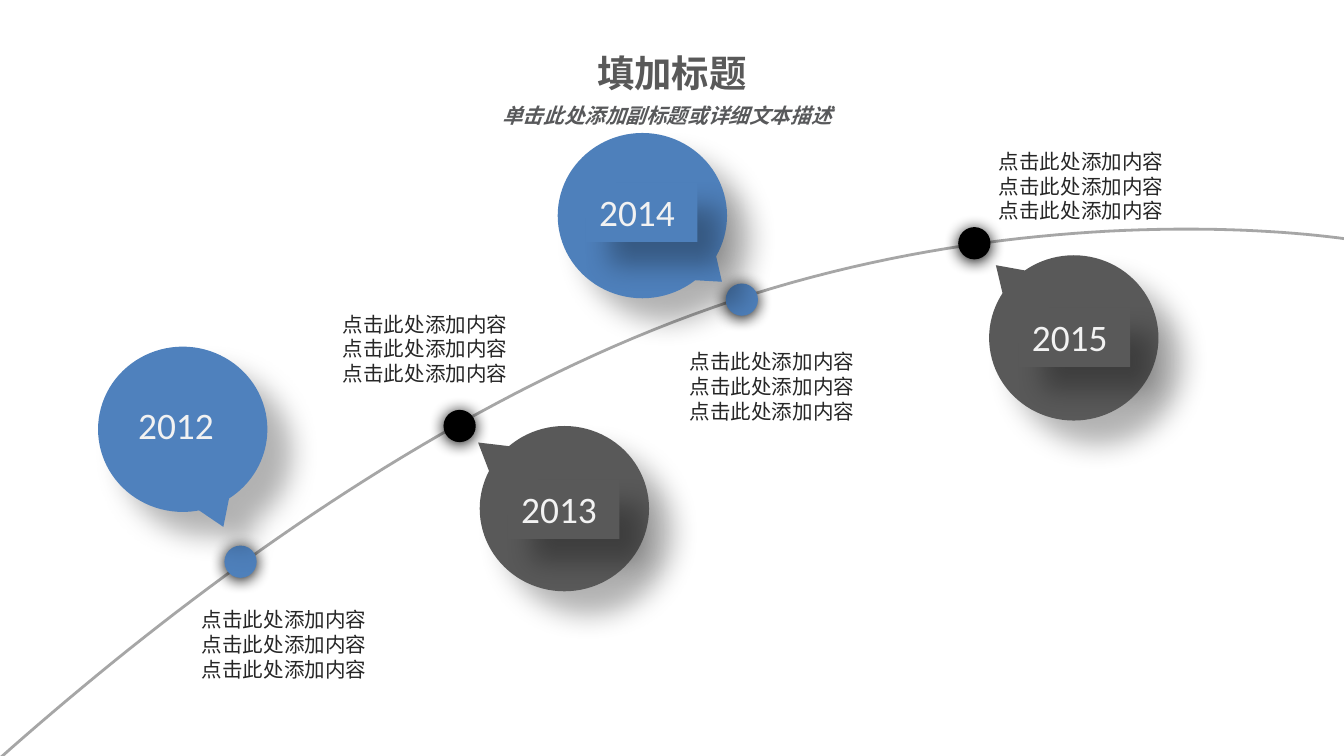
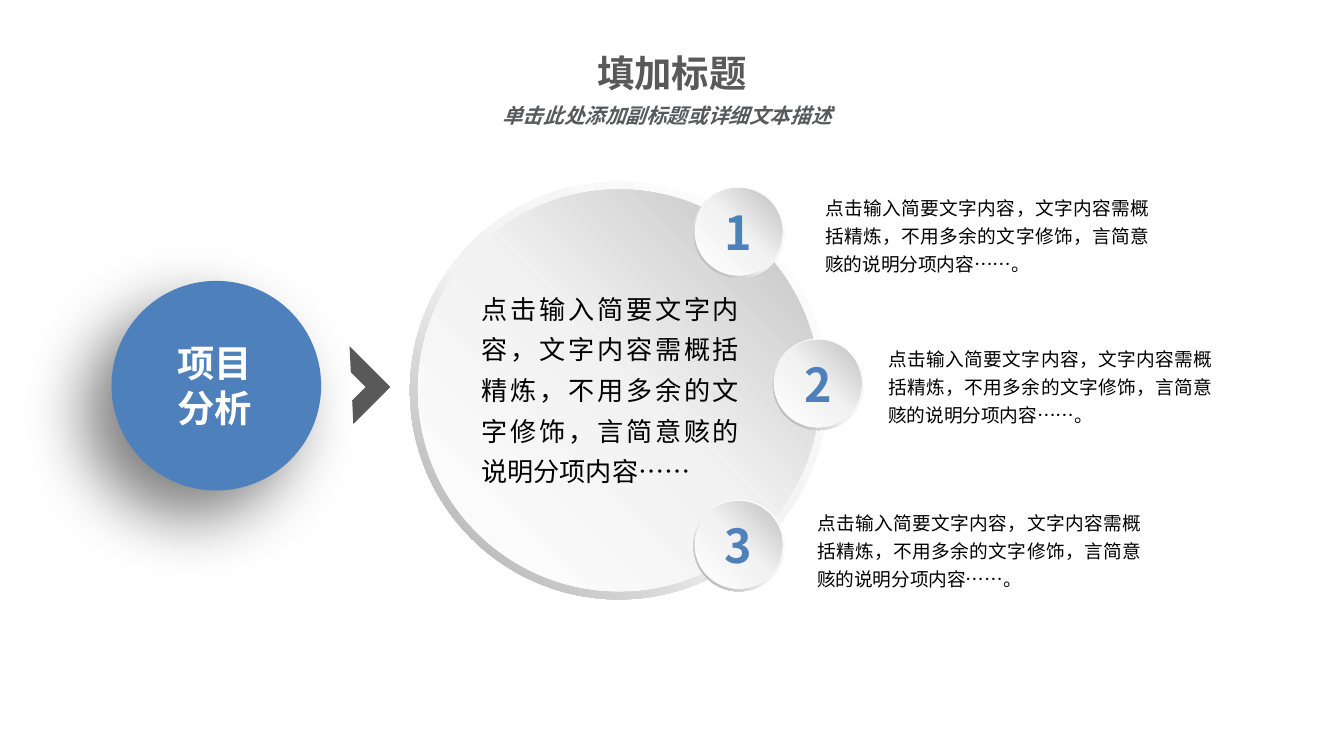
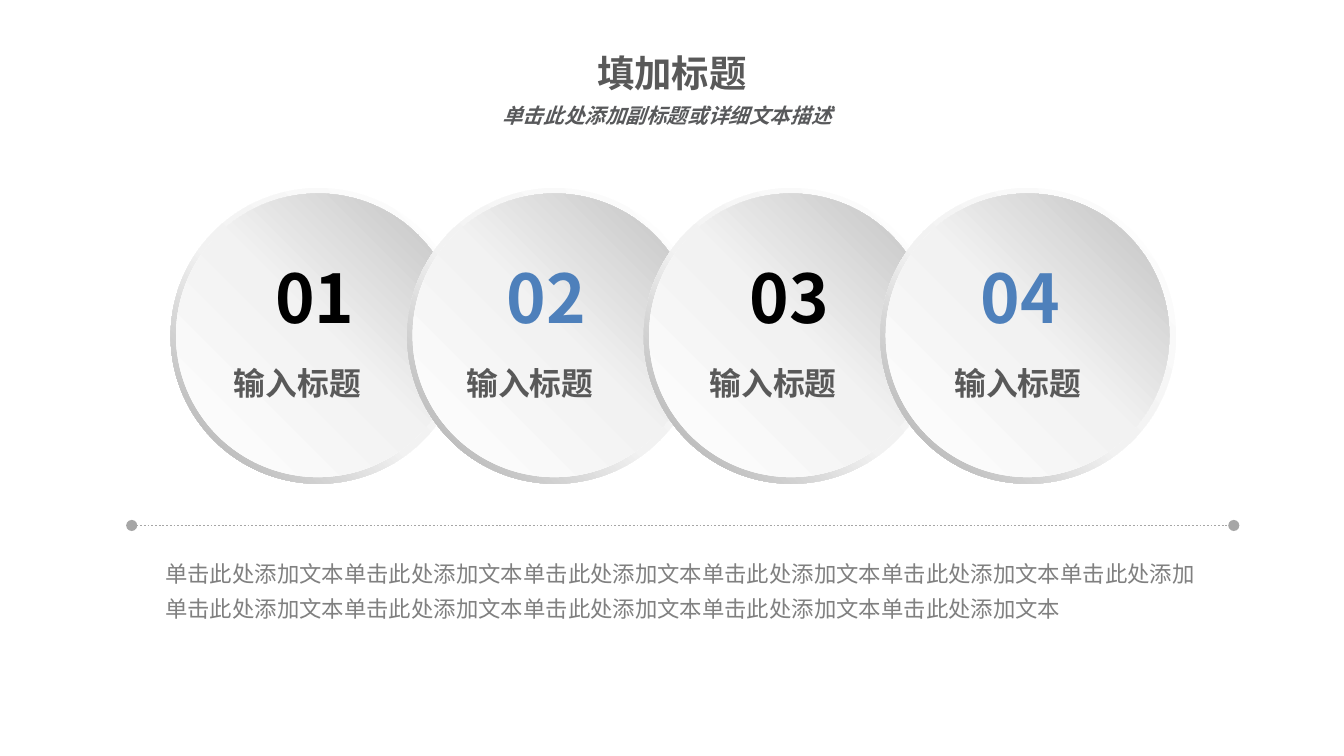
"""Builds a three-slide deck: a timeline, an analysis hub and a chain of discs."""
from dataclasses import dataclass
from typing import Optional

from pptx import Presentation
from pptx import util as u
from pptx.dml.color import RGBColor
from pptx.enum import dml, shapes, text
from pptx.oxml import parse_xml
from pptx.oxml.ns import nsdecls, qn

SCALE = 9144
SANS = "Noto Sans CJK SC"
KIND = shapes.MSO_SHAPE
ALIGN = text.PP_ALIGN
HUES = {
    "blue": "4E80BB", "sky": "4F81BD", "dark": "595959", "slate": "58595B",
    "black": "000000", "white": "FFFFFF", "pale": "F2F2F2", "ink": "262626",
    "silver": "BFBFBF", "line": "A6A6A6", "gray": "808080",
}


@dataclass(frozen=True)
class Box:
    left: int
    top: int
    width: int
    height: int


@dataclass(frozen=True)
class Style:
    size: int
    hue: str
    font: str = SANS
    bold: bool = False
    slant: bool = False
    align: Optional[ALIGN] = None
    gap: object = None


@dataclass(frozen=True)
class Shade:
    alpha: int
    blur: float
    dist: int
    angle: int


@dataclass(frozen=True)
class Stop:
    year: str
    dot: tuple[int, int]
    bubble: tuple[int, int]
    label: tuple[int, int]
    note: tuple[int, int]
    tip: tuple[float, float]
    fill: str
    dot_hue: str
    plain: bool = False


@dataclass(frozen=True)
class Point:
    mark: str
    disc: tuple[int, int]
    note: tuple[int, int]


@dataclass(frozen=True)
class Link:
    mark: str
    hue: str
    mark_x: int
    name_x: int
    inset: int = 36


HEAD = Style(20, "dark", bold=True, align=ALIGN.CENTER)
SUB = Style(11, "slate", bold=True, slant=True, align=ALIGN.CENTER)
YEAR = Style(20, "pale", "Calibri")
NOTE = Style(11, "ink", "Arial", align=ALIGN.CENTER)
HUB = Style(20, "white", bold=True, align=ALIGN.CENTER)
MARK = Style(25, "blue", bold=True, align=ALIGN.CENTER)
POINT = Style(10, "black", align=ALIGN.JUSTIFY, gap=u.Pt(15))
MAIN = Style(14, "black", align=ALIGN.JUSTIFY, gap=1.3)
NAME = Style(17, "dark", bold=True, align=ALIGN.JUSTIFY, gap=1.25)
FOOT = Style(12, "gray", gap=1.3)

DOT_SHADE = Shade(100, 8.5, 1, 90)
BUBBLE_SHADE = Shade(30, 15, 18, 45)
HUB_SHADE = Shade(50, 35, 20, 135)

STOPS = [
    Stop("2012", (167, 406), (73, 258), (93, 294), (135, 447),
         (0.24, 0.59), "sky", "blue", plain=True),
    Stop("2013", (330, 305), (357, 317), (378, 357), (240, 227),
         (-0.51, -0.4), "dark", "black"),
    Stop("2014", (540, 211), (415, 99), (436, 136), (498, 255),
         (0.47, 0.4), "blue", "blue"),
    Stop("2015", (713, 169), (736, 190), (758, 229), (728, 106),
         (-0.46, -0.44), "dark", "black"),
]
CURVE = [
    ((-1, 565), (132, 447), (317, 307), (516, 234)),
    ((516, 234), (714, 161), (909, 165), (1003, 178)),
]
POINTS = [
    Point("1", (516, 139), (614, 142)),
    Point("2", (575, 252), (661, 255)),
    Point("3", (516, 372), (608, 377)),
]
LINKS = [
    Link("01", "black", 195, 138),
    Link("02", "blue", 367, 311),
    Link("03", "black", 548, 492),
    Link("04", "blue", 720, 689, 21),
]
BRIEF = "点击输入简要文字内容，文字内容需概括精炼，不用多余的文字修饰，言简意赅的说明分项内容……"
PHRASE = "单击此处添加文本"


def px(num: float) -> int:
    """Turns px into EMU."""
    return u.Emu(round(num * SCALE))


def tint(hue: str) -> RGBColor:
    """Gives the named colour."""
    return RGBColor.from_string(HUES[hue])


def place(box: Box) -> tuple[int, int, int, int]:
    """Gives a box in EMU."""
    return px(box.left), px(box.top), px(box.width), px(box.height)


def write(frame, lines: list[str], style: Style, inset=(10, 5, 10, 5),
          wrap: bool = True, grow: bool = True,
          anchor=text.MSO_ANCHOR.TOP) -> None:
    """Fills a text frame with one paragraph a line."""
    frame.word_wrap = wrap
    frame.auto_size = (text.MSO_AUTO_SIZE.SHAPE_TO_FIT_TEXT if grow
                       else text.MSO_AUTO_SIZE.NONE)
    frame.vertical_anchor = anchor
    (frame.margin_left, frame.margin_top,
     frame.margin_right, frame.margin_bottom) = map(px, inset)
    for num, line in enumerate(lines):
        para = frame.add_paragraph() if num else frame.paragraphs[0]
        para.add_run().text = line
        para.alignment = style.align or ALIGN.LEFT
        if style.gap is not None:
            para.line_spacing = style.gap
        font = para.font
        font.size, font.name = u.Pt(style.size), style.font
        font.bold, font.italic = style.bold, style.slant
        font.color.rgb = tint(style.hue)
        latin = para._p.pPr.find(qn("a:defRPr")).find(qn("a:latin"))
        latin.addnext(parse_xml(f'<a:ea {nsdecls("a")} typeface="{SANS}"/>'))


def label(slide, box: Box, lines: list[str], style: Style, **opts) -> None:
    """Adds a text box."""
    write(slide.shapes.add_textbox(*place(box)).text_frame, lines, style, **opts)


def cast(shape, shade: Shade) -> None:
    """Gives a shape an outer shadow."""
    shape._element.spPr.find(qn("a:effectLst")).append(parse_xml(
        f'<a:outerShdw {nsdecls("a")} blurRad="{u.Pt(shade.blur)}" '
        f'dist="{u.Pt(shade.dist)}" dir="{shade.angle * 60000}" algn="ctr" '
        f'rotWithShape="0"><a:srgbClr val="{HUES["black"]}">'
        f'<a:alpha val="{shade.alpha * 1000}"/></a:srgbClr></a:outerShdw>'))


def form(slide, kind: KIND, box: Box, hue: Optional[str] = None,
         shade: Optional[Shade] = None):
    """Adds a preset shape without a line."""
    shape = slide.shapes.add_shape(kind, *place(box))
    shape.shadow.inherit = False
    shape.line.fill.background()
    if hue:
        shape.fill.solid()
        shape.fill.fore_color.rgb = tint(hue)
    if shade:
        cast(shape, shade)
    return shape


def blend(shape, mid: int, end: str, angle: int) -> None:
    """Fills a shape with a gradient from white through pale."""
    shape.fill.background()
    stops = "".join(
        f'<a:gs pos="{pos * 1000}"><a:srgbClr val="{HUES[hue]}"/></a:gs>'
        for pos, hue in ((0, "white"), (mid, "pale"), (100, end)))
    props = shape._element.spPr
    props.replace(props.find(qn("a:noFill")), parse_xml(
        f'<a:gradFill {nsdecls("a")} rotWithShape="1"><a:gsLst>{stops}</a:gsLst>'
        f'<a:lin ang="{angle * 60000}" scaled="0"/></a:gradFill>'))


def disc(slide, left: int, top: int, size: int):
    """Adds a rimmed disc and returns its face."""
    rim = form(slide, KIND.DONUT, Box(left, top, size, size))
    rim.adjustments[0] = 0.05
    blend(rim, 55, "line", 135)
    inner = round(size * 0.96)
    pad = (size - inner) // 2
    face = form(slide, KIND.OVAL, Box(left + pad, top + pad, inner, inner))
    blend(face, 51, "silver", 315)
    return face


def start(deck):
    """Adds a slide with the shared title and subtitle."""
    slide = deck.slides.add_slide(deck.slide_layouts[5])
    title = slide.shapes.title
    title.left, title.top, title.width, title.height = place(Box(390, 37, 220, 34))
    write(title.text_frame, ["填加标题"], HEAD, inset=(0, 0, 0, 0))
    label(slide, Box(363, 72, 267, 29), ["单击此处添加副标题或详细文本描述"], SUB, wrap=False)
    return slide


def curve(slide, steps: int = 40) -> None:
    """Draws the rising time curve."""
    dots = []
    for a, b, c, d in CURVE:
        for num in range(steps + 1):
            t = num / steps
            s = 1 - t
            dots.append(tuple(
                px(s**3 * a[k] + 3 * s * s * t * b[k] + 3 * s * t * t * c[k] + t**3 * d[k])
                for k in (0, 1)))
    pen = slide.shapes.build_freeform(*dots[0])
    pen.add_line_segments(dots[1:], close=False)
    path = pen.convert_to_shape()
    path.shadow.inherit = False
    path.fill.background()
    path.line.color.rgb = tint("line")
    path.line.width = u.Pt(1.5)


def years(deck) -> None:
    """Builds the timeline slide."""
    slide = start(deck)
    curve(slide)
    for stop in STOPS:
        form(slide, KIND.OVAL, Box(*stop.dot, 24, 24), stop.dot_hue, DOT_SHADE)
    for stop in STOPS:
        bubble = form(slide, KIND.OVAL_CALLOUT, Box(*stop.bubble, 126, 123),
                      stop.fill, BUBBLE_SHADE)
        bubble.adjustments[0], bubble.adjustments[1] = stop.tip
        spot = Box(*stop.label, 83, 44)
        if stop.plain:
            label(slide, spot, [stop.year], YEAR, wrap=False)
        else:
            plate = form(slide, KIND.RECTANGLE, spot, stop.fill, BUBBLE_SHADE)
            write(plate.text_frame, [stop.year], YEAR, wrap=False)
    for stop in STOPS:
        label(slide, Box(*stop.note, 153, 66), ["点击此处添加内容"] * 3, NOTE)


def study(deck) -> None:
    """Builds the analysis slide."""
    slide = start(deck)
    none = (0, 0, 0, 0)
    form(slide, KIND.OVAL, Box(83, 209, 156, 156), "blue", HUB_SHADE)
    label(slide, Box(132, 253, 56, 67), ["项目", "分析"], HUB, inset=none, wrap=False)
    arrow = form(slide, KIND.HALF_FRAME, Box(242, 265, 39, 43), "dark")
    arrow.rotation = 135
    disc(slide, 305, 135, 311)
    label(slide, Box(358, 211, 192, 150), [BRIEF], MAIN, inset=none)
    for point in POINTS:
        face = disc(slide, *point.disc, 68)
        write(face.text_frame, [point.mark], MARK, grow=False,
              anchor=text.MSO_ANCHOR.MIDDLE)
        label(slide, Box(*point.note, 241, 63), [BRIEF + "。"], POINT, inset=none)


def rule(slide) -> None:
    """Draws the dotted rule with round ends."""
    line = slide.shapes.add_connector(
        shapes.MSO_CONNECTOR.STRAIGHT, px(98), px(391), px(918), px(391))
    line.line.color.rgb = tint("line")
    line.line.width = u.Pt(1)
    line.line.dash_style = dml.MSO_LINE.ROUND_DOT
    props = line._element.spPr
    for end in ("headEnd", "tailEnd"):
        props.find(qn("a:ln")).append(
            parse_xml(f'<a:{end} {nsdecls("a")} type="oval"/>'))
    props.append(parse_xml(f'<a:effectLst {nsdecls("a")}/>'))


def chain(deck) -> None:
    """Builds the slide of linked discs."""
    slide = start(deck)
    for num in range(len(LINKS)):
        disc(slide, 127 + 176 * num, 140, 220)
    for link in LINKS:
        label(slide, Box(link.mark_x, 186, 83, 71), [link.mark],
              Style(36, link.hue, bold=True), wrap=False)
        label(slide, Box(link.name_x, 259, 191, 46), ["输入标题"], NAME,
              inset=(link.inset, 5, 10, 5))
    label(slide, Box(116, 407, 793, 60),
          [PHRASE * 5 + "单击此处添加", PHRASE * 5], FOOT, inset=(7, 4, 7, 4))
    rule(slide)


def main() -> None:
    """Builds and saves the deck."""
    deck = Presentation()
    deck.slide_width = px(1000)
    deck.slide_height = u.Emu(deck.slide_width * 9 // 16)
    years(deck)
    study(deck)
    chain(deck)
    deck.save("out.pptx")


if __name__ == "__main__":
    main()
